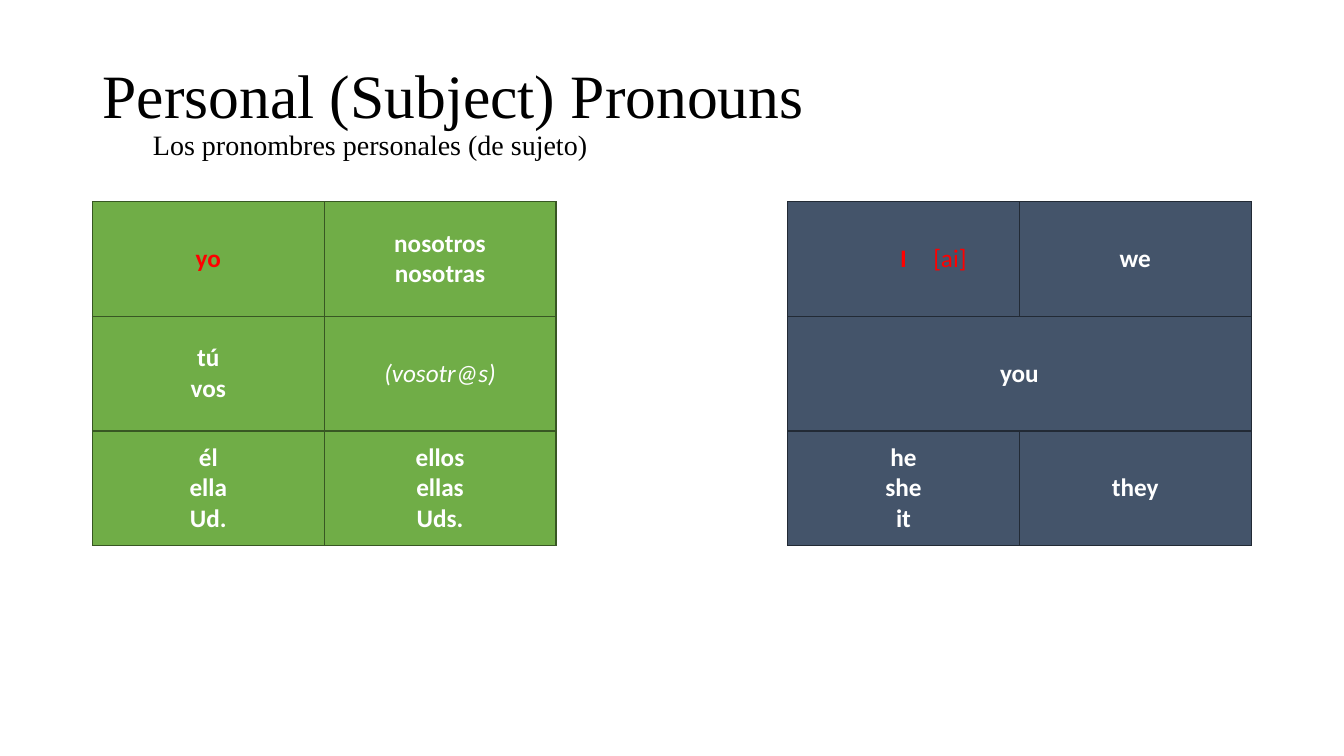
from lxml import etree
from pptx import Presentation
from pptx.dml.color import RGBColor
from pptx.enum import text as t
from pptx.oxml import ns
from pptx.util import Cm, Pt

HUES = {"black": "000000", "white": "FFFFFF", "red": "FF0000",
        "green": "70AD47", "moss": "385723", "slate": "44546A", "navy": "222A35"}
LEFT, WIDE = Cm(2.33), Cm(29.21)
SIDES = ("L", "R", "T", "B")

# Words of the grid, one line per paragraph; column 2 is the gap
WORDS = [
    ["yo", "nosotros\nnosotras", "", "I", "we"],
    ["tú\nvos", "(vosotr@s)", "", "you", ""],
    ["él\nella\nUd.", "ellos\nellas\nUds.", "", "he\nshe\nit", "they"],
]
# Text format of the cells that differ from bold white
LOOKS = {
    "yo": {"hue": "red"},
    "I": {"hue": "red"},
    "(vosotr@s)": {"bold": False, "italic": True},
}


def style(font, hue="white", **look):
    for key, value in look.items():
        setattr(font, key, value)
    font.color.rgb = RGBColor.from_string(HUES[hue])


def place(shape, left, top, width, height):
    spots = {"left": left, "top": top, "width": width, "height": height}
    for key, value in spots.items():
        setattr(shape, key, value)


def edge(cell, hues):
    """Draw the four sides of a cell; a side without a hue has no line."""
    props = cell._tc.get_or_add_tcPr()
    for i, side in enumerate(SIDES):
        line = etree.Element(ns.qn("a:ln" + side), w=str(Pt(1)))
        if side in hues:
            fill = etree.SubElement(line, ns.qn("a:solidFill"))
            etree.SubElement(fill, ns.qn("a:srgbClr"), val=HUES[hues[side]])
        else:
            etree.SubElement(line, ns.qn("a:noFill"))
        props.insert(i, line)


def write(cell, words):
    cell.vertical_anchor = t.MSO_ANCHOR.MIDDLE
    cell.text_frame.text = words
    look = {"size": Pt(18), "name": "Calibri", "bold": True, "italic": False,
            **LOOKS.get(words, {})}
    for para in cell.text_frame.paragraphs:
        para.alignment = t.PP_ALIGN.CENTER
        style(para.font, **look)
        for run in para.runs:
            style(run.font, **look)


def head(slide):
    title = slide.shapes.title
    place(title, LEFT, Cm(1.02), WIDE, Cm(3.68))
    frame = title.text_frame
    frame.vertical_anchor = t.MSO_ANCHOR.MIDDLE
    frame.auto_size = t.MSO_AUTO_SIZE.NONE
    para = frame.paragraphs[0]
    para.alignment = t.PP_ALIGN.LEFT
    para.line_spacing = 0.9
    lines = [("Personal (Subject) Pronouns", 44),
             ("\tLos pronombres personales (de sujeto)", 20)]
    for i, (words, size) in enumerate(lines):
        if i:
            para.add_line_break()
        run = para.add_run()
        run.text = words
        style(run.font, "black", size=Pt(size), name="Times New Roman")


def grid(slide):
    rows, cols = len(WORDS), len(WORDS[0])
    table = slide.shapes.add_table(
        rows, cols, LEFT, Cm(5.08), WIDE, Cm(8.67)).table
    table.first_row = table.horz_banding = False
    for col in table.columns:
        col.width = Cm(5.84)
    for r, row in enumerate(WORDS):
        table.rows[r].height = Cm(2.89)
        for c, words in enumerate(row):
            cell = table.cell(r, c)
            write(cell, words)
            if c == 2:
                edge(cell, {"L": "moss", "R": "navy"})
                cell.fill.background()
                continue
            fill, line = ("green", "moss") if c < 2 else ("slate", "navy")
            edge(cell, dict.fromkeys(SIDES, line))
            cell.fill.solid()
            cell.fill.fore_color.rgb = RGBColor.from_string(HUES[fill])
    table.cell(1, 3).merge(table.cell(1, 4))


def label(slide, words, *spot):
    frame = slide.shapes.add_textbox(*spot).text_frame
    frame.word_wrap = False
    frame.auto_size = t.MSO_AUTO_SIZE.SHAPE_TO_FIT_TEXT
    run = frame.paragraphs[0].add_run()
    run.text = words
    style(run.font, "red", size=Pt(18), name="Calibri")


def main():
    deck = Presentation()
    deck.slide_width, deck.slide_height = Cm(33.87), Cm(19.05)
    slide = deck.slides.add_slide(deck.slide_layouts[5])
    head(slide)
    grid(slide)
    # Sound of the English pronoun
    label(slide, "[ai]", Cm(23.27), Cm(5.97), Cm(1.37), Cm(1.02))
    deck.save("out.pptx")


if __name__ == "__main__":
    main()
